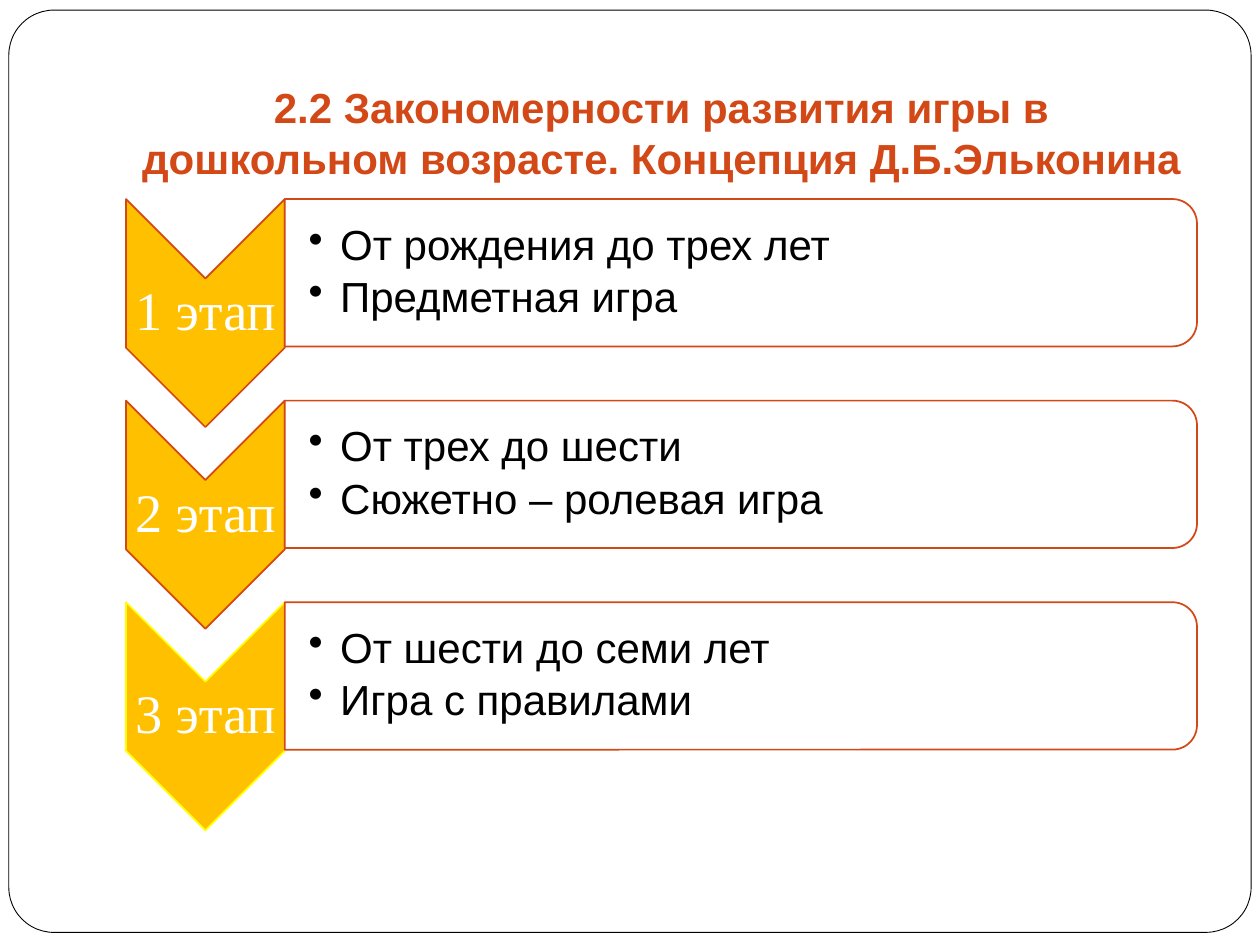
from lxml import etree
from pptx import Presentation
from pptx.dml.color import RGBColor
from pptx.enum.shapes import MSO_SHAPE
from pptx.enum.text import MSO_ANCHOR, MSO_AUTO_SIZE, PP_ALIGN
from pptx.oxml.ns import qn
from pptx.util import Inches, Pt

CHEVRON = MSO_SHAPE.CHEVRON
BAR = MSO_SHAPE.ROUND_2_SAME_RECTANGLE
FRAME = MSO_SHAPE.ROUNDED_RECTANGLE
MIDDLE, BOTTOM = MSO_ANCHOR.MIDDLE, MSO_ANCHOR.BOTTOM
LEFT, CENTER = PP_ALIGN.LEFT, PP_ALIGN.CENTER

ACCENT, GOLD, YELLOW = "D34817", "FFC000", "FFFF00"
WHITE, BLACK = "FFFFFF", "000000"
STAGE_W, STAGE_H, STAGE_PITCH = 8.5, 1.81, 1.6
CHEVRON_W, BAR_H = 1.26, 1.17
STAGES = [
    ("1 этап", ["От рождения до трех лет", "Предметная игра"], ACCENT),
    ("2 этап", ["От трех до шести", "Сюжетно – ролевая игра"], ACCENT),
    ("3 этап", ["От шести до семи лет", "Игра с правилами"], YELLOW),
]


def color(value):
    return RGBColor.from_string(value)


def add_box(slide, kind, x, y, w, h, fill, line, width=1.0, turned=False):
    """Add a shape that covers the given box, also when turned by 90 degrees."""
    if turned:
        x, y, w, h = x + (w - h) / 2, y + (h - w) / 2, h, w
    sp = slide.shapes.add_shape(kind, Inches(x), Inches(y), Inches(w), Inches(h))
    sp.rotation = 90 if turned else 0
    sp.shadow.inherit = False
    sp.fill.solid()
    sp.fill.fore_color.rgb = color(fill)
    sp.line.color.rgb = color(line)
    sp.line.width = Pt(width)
    return sp


def add_bullet(p, indent):
    pPr = p._p.get_or_add_pPr()
    pPr.set("marL", str(Inches(indent)))
    pPr.set("indent", str(-Inches(indent)))
    etree.SubElement(pPr, qn("a:buChar")).set("char", "•")


def write(sp, lines, size, hue, font="Arial", bold=False, align=LEFT, anchor=MIDDLE,
          insets=(0.02, 0.02, 0.02, 0.02), spacing=0.9, after=0, bullets=False):
    tf = sp.text_frame
    tf.word_wrap = True
    tf.auto_size = MSO_AUTO_SIZE.NONE
    tf.vertical_anchor = anchor
    tf.margin_left, tf.margin_top, tf.margin_right, tf.margin_bottom = map(Inches, insets)
    for i, text in enumerate(lines):
        p = tf.paragraphs[0] if i == 0 else tf.add_paragraph()
        p.alignment = align
        p.line_spacing = spacing
        p.space_after = Pt(after)
        if bullets:
            add_bullet(p, 0.25)
        r = p.add_run()
        r.text = text
        r.font.size = Pt(size)
        r.font.name = font
        r.font.bold = bold
        r.font.color.rgb = color(hue)


def add_text(slide, x, y, w, h, lines, **style):
    sp = slide.shapes.add_textbox(Inches(x), Inches(y), Inches(w), Inches(h))
    write(sp, lines, **style)


def add_frame(slide, x, y, w, h):
    """Draw the rounded page border behind everything else."""
    sp = add_box(slide, FRAME, x, y, w, h, WHITE, BLACK, 0.5)
    sp.adjustments[0] = 0.049
    slide.shapes._spTree.insert(2, sp._element)


def add_title(slide, x, y, w, h, text):
    sp = slide.shapes.title
    sp.left, sp.top, sp.width, sp.height = map(Inches, (x, y, w, h))
    write(sp, [text], size=24, hue=ACCENT, bold=True, align=CENTER, anchor=BOTTOM,
          insets=(0.1, 0.05, 0.1, 0.1), spacing=1.0)


def add_stage(slide, x, y, w, h, label, points, outline):
    """Place a downward chevron with its label and a bar with bullet points."""
    notch = CHEVRON_W / 2
    bar_x, bar_w = x + CHEVRON_W, w - CHEVRON_W
    add_box(slide, CHEVRON, x, y, CHEVRON_W, h, GOLD, outline, turned=True)
    add_text(slide, x, y + notch, CHEVRON_W, h - 2 * notch, [label],
             size=31, hue=WHITE, font="Times New Roman", align=CENTER)
    bar = add_box(slide, BAR, bar_x, y, bar_w, BAR_H, WHITE, ACCENT, turned=True)
    fill = bar._element.spPr.find(qn("a:solidFill"))
    etree.SubElement(fill[0], qn("a:alpha")).set("val", "90000")
    add_text(slide, bar_x, y + 0.06, bar_w - 0.06, BAR_H - 0.12, points,
             size=24, hue=BLACK, insets=(0.19, 0.02, 0.02, 0.02), after=4, bullets=True)


def main():
    prs = Presentation()
    prs.slide_width, prs.slide_height = Inches(10), Inches(7.5)
    slide = prs.slides.add_slide(prs.slide_layouts[5])
    add_frame(slide, 0.07, 0.08, 9.86, 7.32)
    add_title(slide, 1, 0.3, STAGE_W, 1.25,
              "2.2 Закономерности развития игры в дошкольном возрасте. "
              "Концепция Д.Б.Эльконина")
    for i, stage in enumerate(STAGES):
        add_stage(slide, 1, 1.58 + i * STAGE_PITCH, STAGE_W, STAGE_H, *stage)
    prs.save("out.pptx")


if __name__ == "__main__":
    main()
